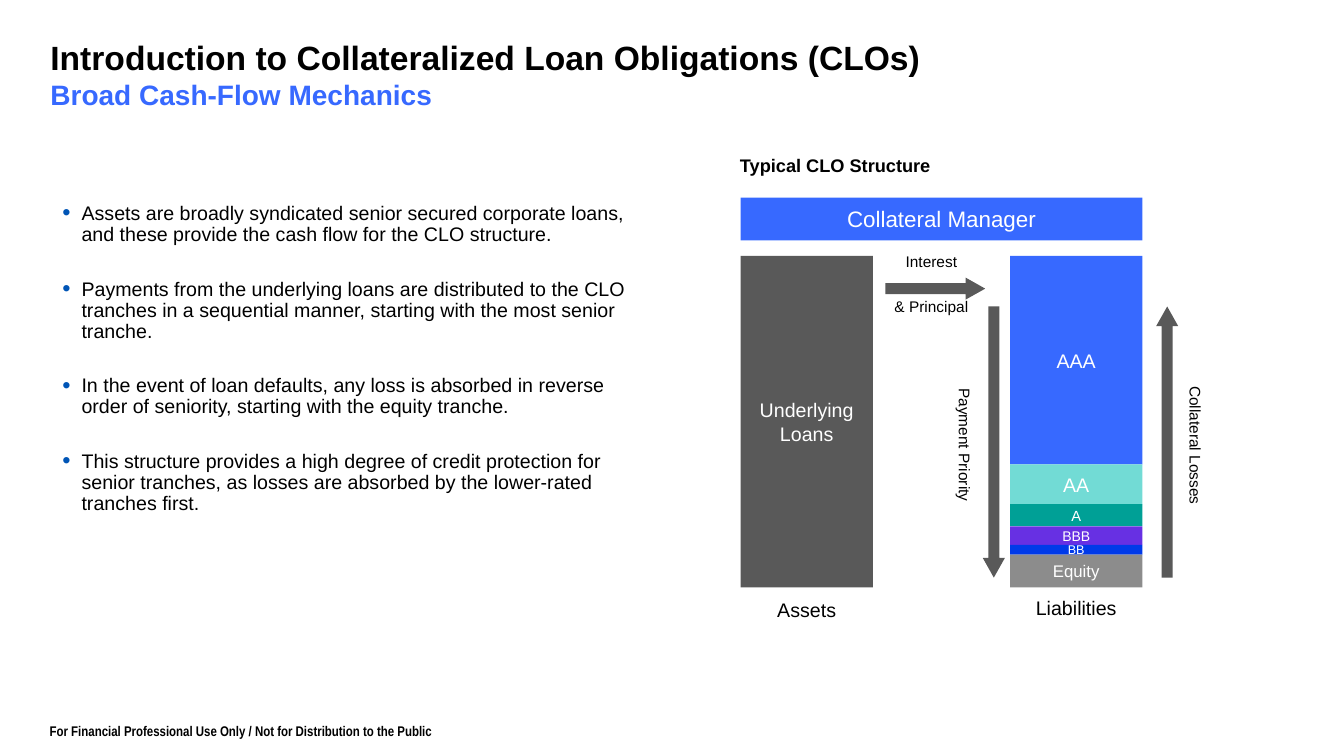
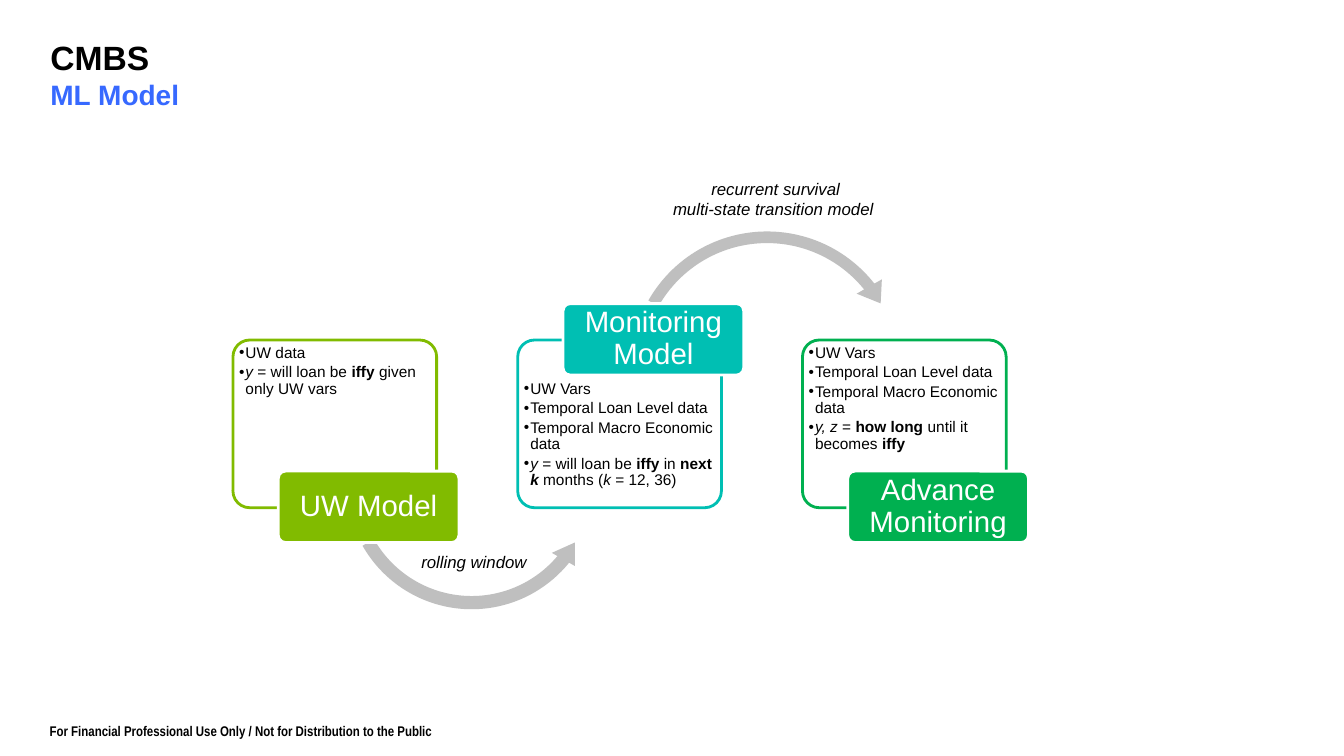
from itertools import accumulate

from lxml.etree import SubElement
from pptx import Presentation
from pptx.dml.color import RGBColor
from pptx.enum.shapes import MSO_SHAPE as Shape
from pptx.enum.text import MSO_ANCHOR as Anchor, PP_ALIGN as Align
from pptx.oxml.ns import qn
from pptx.util import Pt

BLACK, WHITE, BLUE = "000000", "FFFFFF", "3769FF"
DARK_GRAY, ARROW_GRAY = "595959", "BFBFBF"
LIME, TEAL, GREEN = "81BB00", "00BFB3", "00B050"
BOLD, ITALIC = {"bold": True}, {"italic": True}
FOOTER = "For Financial Professional Use Only / Not for Distribution to the Public"


def rgb(color):
    return RGBColor.from_string(color)


class Slides:
    """Holds the deck, the current page and the shared text style."""

    font = {"name": "Arial", "size": 14, "color": BLACK}

    def __init__(self):
        self.deck = Presentation()
        self.deck.slide_width, self.deck.slide_height = Pt(960), Pt(540)

    def new_page(self, title, subtitle):
        self.page = self.deck.slides.add_slide(self.deck.slide_layouts[6])
        self.text((36, 26.6, 672, 60.5),
                  [title, [(subtitle, {"size": 20, "color": BLUE})]],
                  {"size": 24, **BOLD}, margins=(0, 0))
        self.text((35.5, 514.8, 864, 13), [FOOTER],
                  {"name": "Arial Narrow", "size": 10, **BOLD},
                  margins=(0, 0), anchor=Anchor.BOTTOM)

    def fill_text(self, box, paras, font=None, layout=None, bullet=None,
                  margins=(7.2, 3.6), anchor=Anchor.TOP):
        """Each paragraph is a string or a list of (text, font changes)."""
        frame = box.text_frame
        side, edge = map(Pt, margins)
        settings = {"word_wrap": True, "vertical_anchor": anchor,
                    "margin_left": side, "margin_right": side,
                    "margin_top": edge, "margin_bottom": edge}
        for name, value in settings.items():
            setattr(frame, name, value)
        for index, spans in enumerate(paras):
            para = frame.add_paragraph() if index else frame.paragraphs[0]
            for name, value in {"alignment": Align.LEFT, **(layout or {})}.items():
                setattr(para, name, value)
            if bullet:
                self.add_bullet(para, **bullet)
            if isinstance(spans, str):
                spans = [(spans, {})]
            for words, changes in spans:
                span = para.add_run()
                span.text = words
                style = {**self.font, **(font or {}), **changes}
                span.font.color.rgb = rgb(style.pop("color"))
                style["size"] = Pt(style["size"])
                for name, value in style.items():
                    setattr(span.font, name, value)
        return box

    def add_bullet(self, para, indent, color=BLACK, percent=100):
        props = para._p.get_or_add_pPr()
        props.set("marL", str(Pt(indent)))
        props.set("indent", str(-Pt(indent)))
        fill = SubElement(props, qn("a:buClr"))
        SubElement(fill, qn("a:srgbClr"), val=color)
        SubElement(props, qn("a:buSzPct"), val=str(percent * 1000))
        SubElement(props, qn("a:buFont"), typeface="Arial")
        SubElement(props, qn("a:buChar"), char="•")

    def text(self, at, paras, font=None, layout=None, rotation=0, **options):
        box = self.page.shapes.add_textbox(*map(Pt, at))
        box.rotation = rotation
        return self.fill_text(box, paras, font, layout, **options)

    def shape(self, kind, at, fill, line=None, adjust=(), rotation=0):
        shape = self.page.shapes.add_shape(kind, *map(Pt, at))
        shape.shadow.inherit = False
        shape.rotation = rotation
        shape.fill.solid()
        shape.fill.fore_color.rgb = rgb(fill)
        if line:
            shape.line.color.rgb = rgb(line)
            shape.line.width = Pt(2)
        else:
            shape.line.fill.background()
        for index, value in enumerate(adjust):
            shape.adjustments[index] = value
        return shape

    def block(self, at, paras, fill, size):
        self.fill_text(self.shape(Shape.RECTANGLE, at, fill), paras,
                       {"size": size, "color": WHITE}, {"alignment": Align.CENTER},
                       anchor=Anchor.MIDDLE)

    def arrow(self, at, rotation=0):
        self.shape(Shape.DOWN_ARROW, at, DARK_GRAY, adjust=(0.5, 0.89), rotation=rotation)

    def model(self, left, name, color, points, label_on_top=False):
        """Outlined panel of points with an overlapping name label."""
        self.shape(Shape.ROUNDED_RECTANGLE, (left, 242.9, 145.5, 119.8), WHITE,
                   color, adjust=(0.1,))
        self.text((left + 2.8, 270.7 if label_on_top else 244.9, 139.9, 88.6),
                  points, {"size": 11}, {"line_spacing": 0.9, "space_after": Pt(1.9)},
                  bullet={"indent": 4.5}, margins=(1.65, 1.65))
        label = self.shape(Shape.ROUNDED_RECTANGLE,
                           (left + 32.4, 216.9 if label_on_top else 336.5, 129, 51),
                           color, WHITE, adjust=(0.1,))
        self.fill_text(label, [name], {"size": 21, "color": WHITE},
                       {"alignment": Align.CENTER, "line_spacing": 0.9},
                       margins=(3, 2), anchor=Anchor.MIDDLE)


def clo_page(slides):
    slides.new_page("Introduction to Collateralized Loan Obligations (CLOs)",
                    "Broad Cash-Flow Mechanics")
    slides.text(
        (44.6, 145.4, 404, 263),
        ["Assets are broadly syndicated senior secured corporate loans, and these "
         "provide the cash flow for the CLO structure.",
         "Payments from the underlying loans are distributed to the CLO tranches in a "
         "sequential manner, starting with the most senior tranche.",
         "In the event of loan defaults, any loss is absorbed in reverse order of "
         "seniority, starting with the equity tranche.",
         "This structure provides a high degree of credit protection for senior "
         "tranches, as losses are absorbed by the lower-rated tranches first."],
        layout={"line_spacing": Pt(15), "space_before": Pt(12), "space_after": Pt(12)},
        bullet={"indent": 13.7, "color": "0055B6", "percent": 120}, margins=(0, 0))

    assets, liabilities, width, top = 529, 721.5, 94.5, 182.8
    slides.text((521.5, 106.6, 312, 23), ["Typical CLO Structure"], {"size": 13, **BOLD})
    slides.block((assets, 141.2, liabilities + width - assets, 30.5),
                 ["Collateral Manager"], BLUE, 16)
    slides.block((assets, top, width, 236.8), ["Underlying", "Loans"], DARK_GRAY, 14)

    tranches = [("AAA", 149, BLUE, 14), ("AA", 28.3, "72DBD5", 14),
                ("A", 15.8, "00A096", 10.5), ("BBB", 13.3, "6730E3", 10),
                ("BB", 7, "003AE9", 9), ("Equity", 23.4, "8C8C8C", 12)]
    tops = accumulate((height for _, height, _, _ in tranches), initial=top)
    for (name, height, color, size), tranche_top in zip(tranches, tops):
        slides.block((liabilities, tranche_top, width, height), [name], color, size)

    centered = {"alignment": Align.CENTER}
    flow = slides.text((626.4, 176.4, 77.8, 58.3), ["Interest", "& Principal"],
                       {"size": 11}, centered)
    flow.text_frame.paragraphs[0].space_after = Pt(19)
    for at, rotation in [((702, 218.9, 15.8, 193.7), 0), ((660.2, 170.5, 15.8, 71.3), 270),
                         ((825.8, 218.9, 15.8, 193.7), 180)]:
        slides.arrow(at, rotation)
    for left, side_width, words in [(635.8, 105, "Payment Priority"),
                                    (798.5, 109.4, "Collateral Losses")]:
        slides.text((left, 301.7, side_width, 22.3), [words], {"size": 11},
                    {"alignment": Align.RIGHT}, rotation=90)
    for left, caption_top, words in [(assets, 423.4, "Assets"),
                                     (liabilities, 421.9, "Liabilities")]:
        slides.text((left, caption_top, width, 26.6), [words], layout=centered)


def cmbs_page(slides):
    slides.new_page("CMBS", "ML Model")
    loan_vars = ["UW Vars", "Temporal Loan Level data", "Temporal Macro Economic data"]
    left, pitch = 166.4, 203.4
    will_be_iffy = [("y", ITALIC), (" = will loan be ", {}), ("iffy", BOLD)]

    slides.shape(Shape.LEFT_CIRCULAR_ARROW, (242.6, 251.3, 188.6, 188.6), ARROW_GRAY,
                 adjust=(0.05, 5.95, 23.7, 90.25, 0.05))
    slides.model(left, "UW Model", LIME,
                 ["UW data", will_be_iffy + [(" given only UW vars", {})]])
    slides.shape(Shape.CIRCULAR_ARROW, (444.2, 159.1, 207.4, 207.4), ARROW_GRAY,
                 adjust=(0.04, 5.36, 192.88, 125.76, 0.05))
    slides.model(left + pitch, "Monitoring Model", TEAL, loan_vars + [
        will_be_iffy + [(" in ", {}), ("next ", BOLD), ("k", {**BOLD, **ITALIC}),
                        (" months (", {}), ("k", ITALIC), (" = 12, 36)", {})]],
        label_on_top=True)
    slides.model(left + 2 * pitch, "Advance Monitoring", GREEN, loan_vars + [
        [("y, z", ITALIC), (" = ", {}), ("how long", BOLD),
         (" until it becomes ", {}), ("iffy", BOLD)]])

    note = {"size": 12, **ITALIC}
    slides.text((293.8, 390.2, 96, 21.8), ["rolling window"], note)
    slides.text((434.2, 123.8, 239.8, 36.4),
                ["recurrent survival", "multi-state transition model "], note,
                {"alignment": Align.CENTER})


def main():
    slides = Slides()
    clo_page(slides)
    cmbs_page(slides)
    slides.deck.save("out.pptx")


if __name__ == "__main__":
    main()
